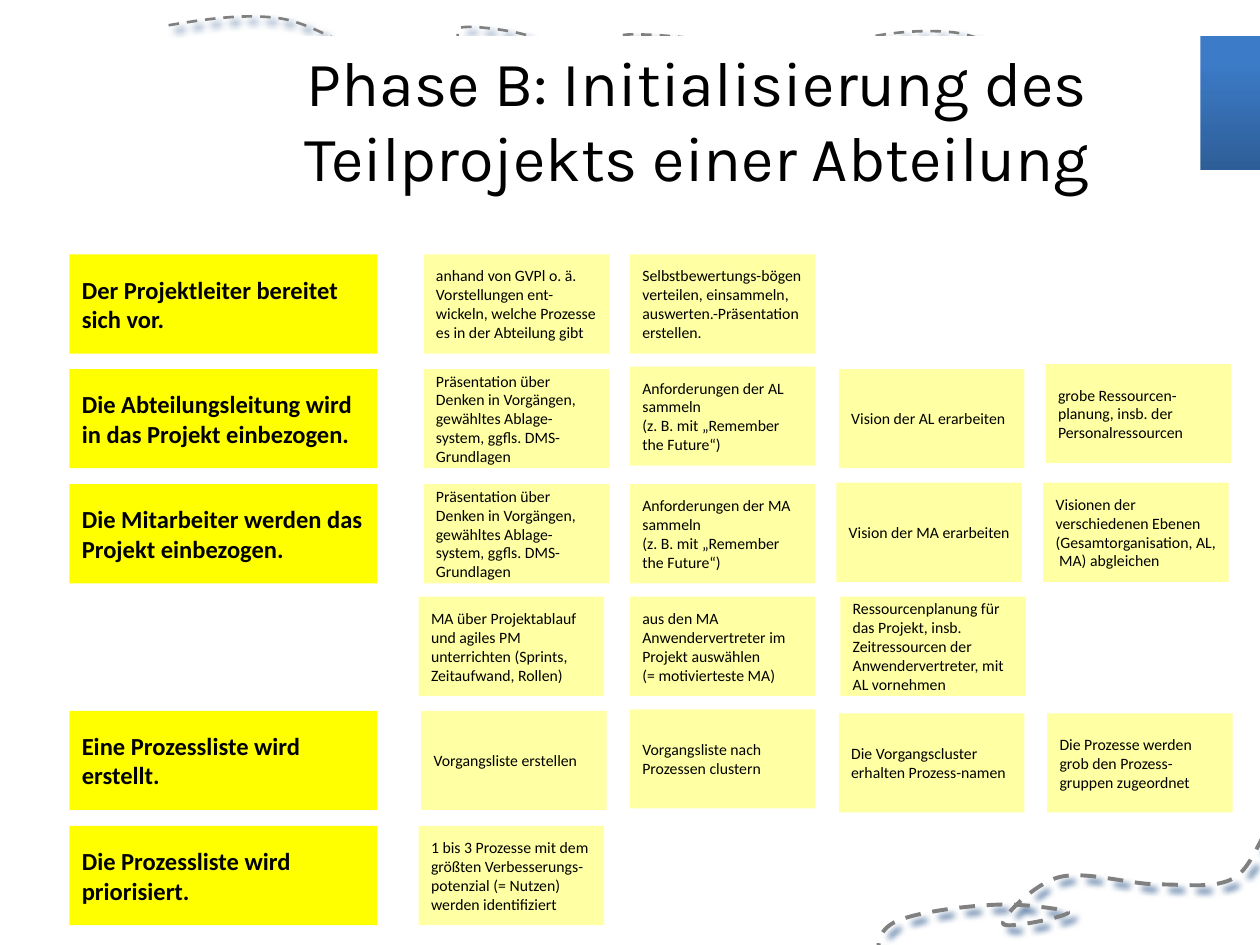
from lxml import etree
from pptx import Presentation
from pptx.dml.color import RGBColor
from pptx.enum.dml import MSO_LINE
from pptx.enum.shapes import MSO_SHAPE
from pptx.enum.text import MSO_ANCHOR, PP_ALIGN
from pptx.oxml.ns import qn
from pptx.util import Cm, Pt

RECTANGLE = MSO_SHAPE.RECTANGLE
DASH = MSO_LINE.DASH
MIDDLE = MSO_ANCHOR.MIDDLE
LEFT, CENTER = PP_ALIGN.LEFT, PP_ALIGN.CENTER

THEME = {
    "title_font": "Karla", "body_font": "Calibri",
    "title_size": 36, "step_size": 14, "note_size": 9,
    "text": "000000", "paper": "FFFFFF", "step": "FFFF00", "note": "FFFFA3",
    "band_bottom": "2E5E97", "band_top": "3C7BC7",
    "trail": "808080", "trail_shadow": "376092",
}

TITLE = "Phase B: Initialisierung des Teilprojekts einer Abteilung"

INTRO = ("Präsentation über Denken in Vorgängen, gewähltes Ablage-system, "
         "ggfls. DMS-Grundlagen")
WISHES = "Anforderungen der {} sammeln\v(z. B. mit „Remember the Future“)"

# One row per step: top in cm, step text, notes as (text, x offset, y offset) in cm
ROWS = [
    (5.13, "Der Projektleiter bereitet sich vor.", [
        ("anhand von GVPl o. ä. Vorstellungen ent-wickeln, welche Prozesse "
         "es in der Abteilung gibt", 0, 0),
        ("Selbstbewertungs-bögen verteilen, einsammeln, "
         "auswerten.-Präsentation erstellen.", 0, 0)]),
    (7.44, "Die Abteilungsleitung wird in das Projekt einbezogen.", [
        (INTRO, 0, 0),
        (WISHES.format("AL"), 0, -0.05),
        ("Vision der AL erarbeiten", 0, 0),
        ("grobe Ressourcen-planung, insb. der Personalressourcen", 0, -0.1)]),
    (9.76, "Die Mitarbeiter werden das Projekt einbezogen.", [
        (INTRO, 0, 0),
        (WISHES.format("MA"), 0, 0),
        ("Vision der MA erarbeiten", -0.05, -0.03),
        ("Visionen der verschiedenen Ebenen (Gesamtorganisation, AL,  MA) "
         "abgleichen", -0.05, -0.03)]),
    (12.03, None, [
        ("MA über Projektablauf und agiles PM unterrichten (Sprints, "
         "Zeitaufwand, Rollen)", -0.1, 0),
        ("aus den MA Anwendervertreter im Projekt auswählen\v"
         "(= motivierteste MA)", 0, 0),
        ("Ressourcenplanung für das Projekt, insb. Zeitressourcen der "
         "Anwendervertreter, mit AL vornehmen", 0.03, 0)]),
    (14.33, "Eine Prozessliste wird erstellt.", [
        ("Vorgangsliste erstellen", -0.05, 0),
        ("Vorgangsliste nach Prozessen clustern", 0, -0.03),
        ("Die Vorgangscluster erhalten Prozess-namen", 0, 0.05),
        ("Die Prozesse werden grob den Prozess-gruppen zugeordnet", 0.03, 0.05)]),
    (16.65, "Die Prozessliste wird priorisiert.", [
        ("1 bis 3 Prozesse mit dem größten Verbesserungs-potenzial "
         "(= Nutzen) werden identifiziert", -0.1, 0)]),
]

# Bézier trails in cm: start point, then two handles and an end per curve
TOP_TRAIL = [
    (3.4, 0.51),
    (4.17, 0.38), (4.9, 0.28), (5.56, 0.36),
    (6.22, 0.43), (6.71, 0.84), (7.34, 0.99),
    (7.98, 1.14), (8.76, 1.24), (9.32, 1.22),
    (9.91, 1.17), (10.8, 0.89), (10.77, 0.79),
    (10.74, 0.66), (9.32, 0.46), (9.25, 0.58),
    (9.14, 0.71), (9.37, 1.5), (10.26, 1.55),
    (11.15, 1.63), (14.2, 1.12), (14.58, 0.97),
    (14.96, 0.81), (12.78, 0.64), (12.55, 0.71),
    (12.32, 0.79), (12.62, 1.3), (13.23, 1.4),
    (13.82, 1.5), (15.47, 1.42), (16.15, 1.32),
    (16.84, 1.22), (16.81, 0.89), (17.35, 0.79),
    (17.86, 0.66), (18.62, 0.58), (19.28, 0.66),
    (19.94, 0.76), (20.65, 1.22), (21.34, 1.32),
    (22, 1.42), (22.83, 1.3), (23.29, 1.3),
    (23.75, 1.32), (24.08, 1.4), (24.08, 1.4),
]
BOTTOM_TRAIL = [
    (17.7, 19.33),
    (17.7, 19.05), (17.68, 18.75), (18.08, 18.57),
    (18.47, 18.39), (19.48, 18.26), (20.07, 18.24),
    (20.62, 18.21), (21.51, 18.34), (21.54, 18.39),
    (21.56, 18.47), (20.24, 18.75), (20.22, 18.62),
    (20.19, 18.49), (20.85, 17.81), (21.36, 17.68),
    (21.89, 17.55), (22.78, 17.83), (23.34, 17.83),
    (23.93, 17.83), (24.43, 17.91), (24.82, 17.73),
    (25.17, 17.58), (25.37, 16.99), (25.5, 16.81),
    (25.63, 16.66), (25.55, 16.76), (25.55, 16.76),
]

# Columns in cm
CARD_HEIGHT = 2
STEP_LEFT, STEP_WIDTH = 1.4, 6.2
NOTE_LEFTS, NOTE_WIDTH = (8.54, 12.7, 16.91, 21.08), 3.74


def color(key):
    return RGBColor.from_string(THEME[key])


def add_box(slide, x, y, width, height):
    box = slide.shapes.add_shape(RECTANGLE, Cm(x), Cm(y), Cm(width), Cm(height))
    box.shadow.inherit = False
    box.line.fill.background()
    return box


def add_card(slide, text, x, y, width, height, fill, font, size, bold=False, align=LEFT):
    card = add_box(slide, x, y, width, height)
    card.fill.solid()
    card.fill.fore_color.rgb = color(fill)
    frame = card.text_frame
    frame.word_wrap = True
    frame.vertical_anchor = MIDDLE
    frame.text = text
    paragraph = frame.paragraphs[0]
    paragraph.alignment = align
    for run in paragraph.runs:
        run.font.name = THEME[font]
        run.font.size = Pt(THEME[size])
        run.font.bold = bold
        run.font.color.rgb = color("text")
    return card


def add_trail(slide, points, width):
    points = [(Cm(x), Cm(y)) for x, y in points]
    builder = slide.shapes.build_freeform(*points[0])
    builder.add_line_segments(points[3::3], close=False)
    trail = builder.convert_to_shape()
    trail.fill.background()
    trail.line.color.rgb = color("trail")
    trail.line.width = Pt(width)
    trail.line.dash_style = DASH

    # Bend each straight segment into a cubic curve
    segments = list(trail._element.iter(qn("a:lnTo")))
    for i, segment in enumerate(segments):
        curve = etree.Element(qn("a:cubicBezTo"))
        for x, y in points[3 * i + 1:3 * i + 4]:
            etree.SubElement(curve, qn("a:pt"), x=str(x - trail.left), y=str(y - trail.top))
        segment.getparent().replace(segment, curve)

    trail.shadow.inherit = False
    effects = trail._element.spPr.find(qn("a:effectLst"))
    shadow = etree.SubElement(effects, qn("a:outerShdw"), blurRad=str(Pt(4)),
                              dist=str(Pt(5)), dir=str(40 * 60000))
    etree.SubElement(shadow, qn("a:srgbClr"), val=THEME["trail_shadow"])


def main():
    prs = Presentation()
    prs.slide_width, prs.slide_height = Cm(25.4), Cm(19.05)
    slide = prs.slides.add_slide(prs.slide_layouts[6])

    # Background decoration
    band = add_box(slide, 24.09, 0.73, 1.31, 2.7)
    band.fill.gradient()
    band.fill.gradient_angle = 90
    for stop, key, position in zip(band.fill.gradient_stops,
                                   ("band_bottom", "band_top"), (0, 0.8)):
        stop.color.rgb = color(key)
        stop.position = position
    add_trail(slide, TOP_TRAIL, 1.5)
    add_trail(slide, BOTTOM_TRAIL, 2.25)

    # Title
    title = add_card(slide, TITLE, 3.91, 0.73, 20.29, 3.33, "paper",
                     "title_font", "title_size", align=CENTER).text_frame
    title.margin_left = title.margin_right = Cm(0.13)
    title.margin_top = title.margin_bottom = Cm(0.13)

    # Steps with their notes
    for top, step, notes in ROWS:
        if step:
            add_card(slide, step, STEP_LEFT, top, STEP_WIDTH, CARD_HEIGHT,
                     "step", "body_font", "step_size", bold=True)
        for left, (note, dx, dy) in zip(NOTE_LEFTS, notes):
            add_card(slide, note, left + dx, top + dy, NOTE_WIDTH, CARD_HEIGHT,
                     "note", "body_font", "note_size")

    prs.save("out.pptx")


if __name__ == "__main__":
    main()
